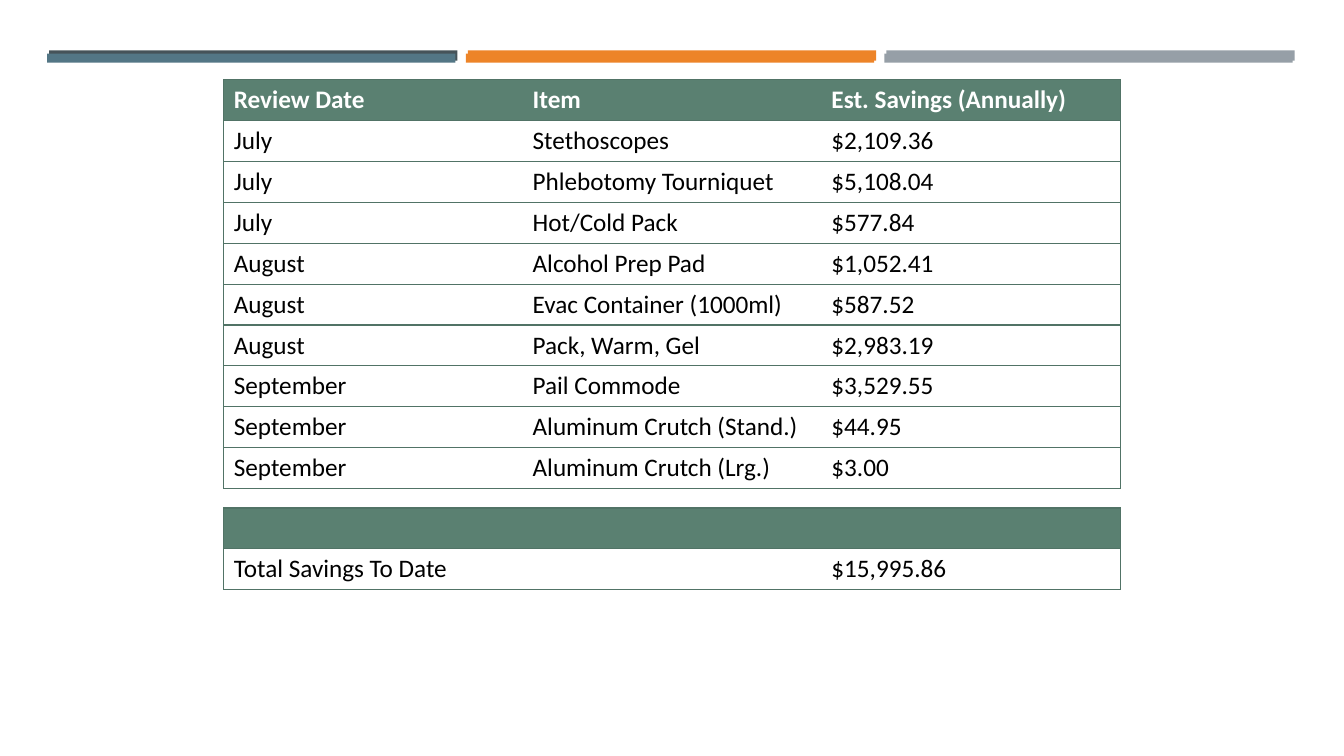
from lxml import etree
from pptx import Presentation
from pptx.dml.color import RGBColor
from pptx.enum.shapes import MSO_SHAPE
from pptx.oxml.ns import qn
from pptx.util import Cm, Pt

RECTANGLE = MSO_SHAPE.RECTANGLE

SLATE = RGBColor(0x46, 0x53, 0x59)
BLUE = RGBColor(0x53, 0x76, 0x85)
ORANGE = RGBColor(0xED, 0x84, 0x28)
GRAY = RGBColor(0x96, 0x9F, 0xA7)
GREEN = RGBColor(0x5A, 0x80, 0x71)
BORDER = RGBColor(0x51, 0x73, 0x66)
WHITE = RGBColor(0xFF, 0xFF, 0xFF)
BLACK = RGBColor(0, 0, 0)
FONT = "Calibri"

COL_WIDTH, ROW_HEIGHT = Cm(7.53), Cm(1.03)

SAVINGS = [
    ("Review Date", "Item", "Est. Savings (Annually)"),
    ("July", "Stethoscopes", "$2,109.36"),
    ("July", "Phlebotomy Tourniquet", "$5,108.04"),
    ("July", "Hot/Cold Pack", "$577.84"),
    ("August", "Alcohol Prep Pad", "$1,052.41"),
    ("August", "Evac Container (1000ml)", "$587.52"),
    ("August", "Pack, Warm, Gel", "$2,983.19"),
    ("September", "Pail Commode", "$3,529.55"),
    ("September", "Aluminum Crutch (Stand.)", "$44.95"),
    ("September", "Aluminum Crutch (Lrg.)", "$3.00"),
]
TOTAL = [("", "", ""), ("Total Savings To Date", "", "$15,995.86")]


def add_bars(slide, left, top, height, colors):
    """Row of three equal bars across the top of the slide."""
    for i, color in enumerate(colors):
        sp = slide.shapes.add_shape(
            RECTANGLE, left + i * Cm(10.55), top, Cm(10.29), height)
        sp.shadow.inherit = False
        sp.fill.solid()
        sp.fill.fore_color.rgb = color
        sp.line.fill.background()


def set_borders(cell, first, last):
    """Rule every row; close the sides only at the table's outer edges."""
    tc_pr = cell._tc.get_or_add_tcPr()
    sides = {"lnL": first, "lnR": last, "lnT": True, "lnB": True}
    for side, visible in sides.items():
        ln = etree.SubElement(tc_pr, qn(f"a:{side}"), w=str(Pt(1)))
        if visible:
            fill = etree.SubElement(ln, qn("a:solidFill"))
            etree.SubElement(fill, qn("a:srgbClr"), val=str(BORDER))
        else:
            etree.SubElement(ln, qn("a:noFill"))


def add_savings_table(slide, left, top, rows):
    """Table with a green header row and plain ruled rows."""
    n_cols = len(rows[0])
    table = slide.shapes.add_table(
        len(rows), n_cols, left, top,
        COL_WIDTH * n_cols, ROW_HEIGHT * len(rows)).table
    table.horz_banding = False
    for r, values in enumerate(rows):
        header = r == 0
        for c, value in enumerate(values):
            cell = table.cell(r, c)
            set_borders(cell, c == 0, c == n_cols - 1)
            if header:
                cell.fill.solid()
                cell.fill.fore_color.rgb = GREEN
            else:
                cell.fill.background()
            if value:
                cell.text_frame.text = value
                font = cell.text_frame.paragraphs[0].runs[0].font
                font.name, font.size, font.bold = FONT, Pt(18), header
                font.color.rgb = WHITE if header else BLACK


def main():
    prs = Presentation()
    prs.slide_width, prs.slide_height = Cm(33.87), Cm(19.05)
    slide = prs.slides.add_slide(prs.slide_layouts[6])

    # Top bars: a back layer and a slightly offset front layer
    add_bars(slide, Cm(1.24), Cm(1.27), Cm(0.26), (SLATE, ORANGE, GRAY))
    add_bars(slide, Cm(1.19), Cm(1.35), Cm(0.23), (BLUE, ORANGE, GRAY))

    # Savings by item, then the total
    add_savings_table(slide, Cm(5.64), Cm(2.01), SAVINGS)
    add_savings_table(slide, Cm(5.64), Cm(12.8), TOTAL)

    prs.save("out.pptx")


if __name__ == "__main__":
    main()
